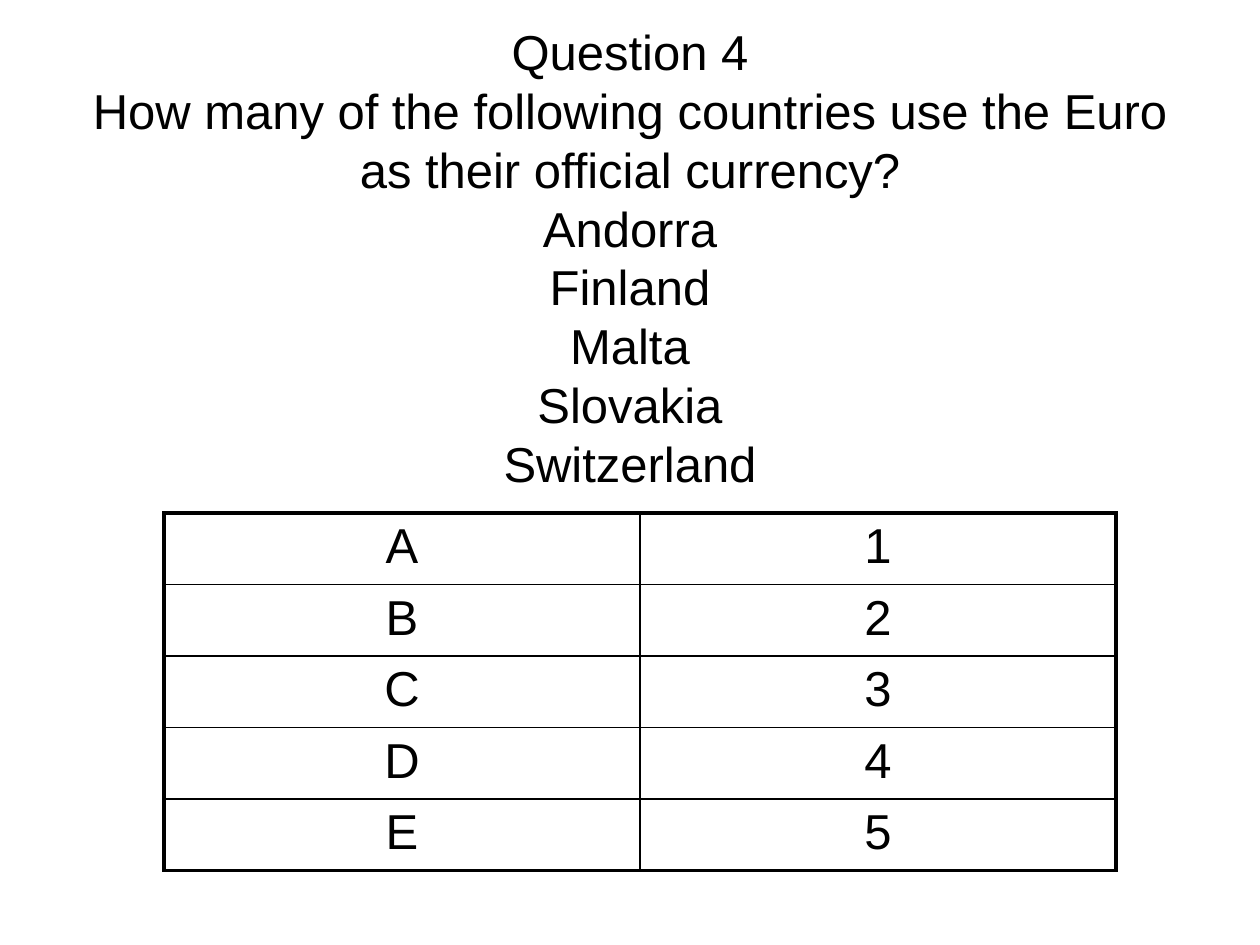
from lxml import etree
from pptx import Presentation
from pptx.enum.text import MSO_ANCHOR, PP_ALIGN
from pptx.oxml.ns import qn
from pptx.util import Emu, Pt

PX = 914400 // 126
CENTER = PP_ALIGN.CENTER
MIDDLE = MSO_ANCHOR.MIDDLE
TOP = MSO_ANCHOR.TOP
COLORS = {"ink": "000000"}
FONT = "Arial"
TEXT_SIZE = Pt(28)
LINE_SPACING = Pt(33.6)
OUTER, INNER = Pt(2.25), Pt(1)

QUESTION = [
    "Question 4",
    "How many of the following countries use the Euro as their official currency?",
    "Andorra",
    "Finland",
    "Malta",
    "Slovakia",
    "Switzerland",
]
ANSWERS = [("A", "1"), ("B", "2"), ("C", "3"), ("D", "4"), ("E", "5")]


def px(value):
    return Emu(value * PX)


def add_span(para, text):
    span = para.add_run()
    span.text = text
    span.font.name = FONT
    span.font.size = TEXT_SIZE
    span.font.color.rgb = RGBColor.from_string(COLORS["ink"])


def add_question(page, lines, left, top, width, height):
    box = page.shapes.add_textbox(px(left), px(top), px(width), px(height))
    frame = box.text_frame
    frame.word_wrap = True
    frame.vertical_anchor = MIDDLE
    frame.margin_top = frame.margin_bottom = 0
    para = frame.paragraphs[0]
    para.alignment = CENTER
    para.line_spacing = LINE_SPACING
    for index, line in enumerate(lines):
        if index:
            para.add_line_break()
        add_span(para, line)


def set_borders(cell, widths):
    properties = cell._tc.get_or_add_tcPr()
    for index, (side, width) in enumerate(widths.items()):
        line = etree.Element(qn(f"a:ln{side}"), w=str(width))
        fill = etree.SubElement(line, qn("a:solidFill"))
        etree.SubElement(fill, qn("a:srgbClr"), val=COLORS["ink"])
        properties.insert(index, line)


def add_answers(page, answers, left, top, column_width, row_height):
    rows, columns = len(answers), len(answers[0])
    table = page.shapes.add_table(
        rows, columns, px(left), px(top),
        px(columns * column_width), px(rows * row_height),
    ).table
    table.first_row = False
    table.horz_banding = False
    for row, answer in enumerate(answers):
        for column, text in enumerate(answer):
            cell = table.cell(row, column)
            cell.fill.background()
            cell.vertical_anchor = TOP
            para = cell.text_frame.paragraphs[0]
            para.alignment = CENTER
            add_span(para, text)
            set_borders(cell, {
                "L": OUTER if column == 0 else INNER,
                "R": OUTER if column == columns - 1 else INNER,
                "T": OUTER if row == 0 else INNER,
                "B": OUTER if row == rows - 1 else INNER,
            })


def main():
    deck = Presentation()
    deck.slide_width, deck.slide_height = px(1260), px(945)
    page = deck.slides.add_slide(deck.slide_layouts[6])
    add_question(page, QUESTION, 63, 22, 1134, 470)
    add_answers(page, ANSWERS, 164, 513, 476, 69)
    deck.save("out.pptx")


from pptx.dml.color import RGBColor

if __name__ == "__main__":
    main()
